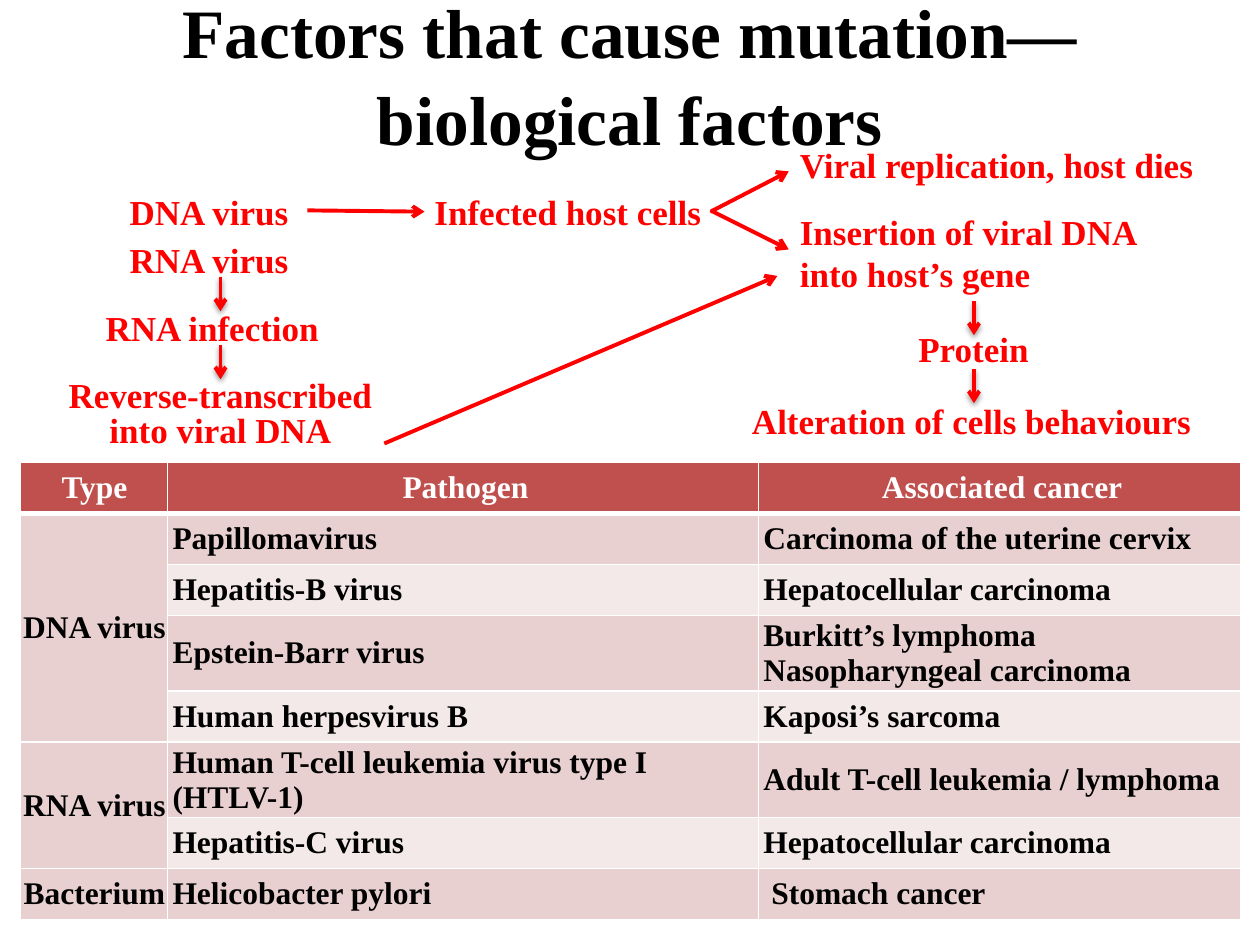
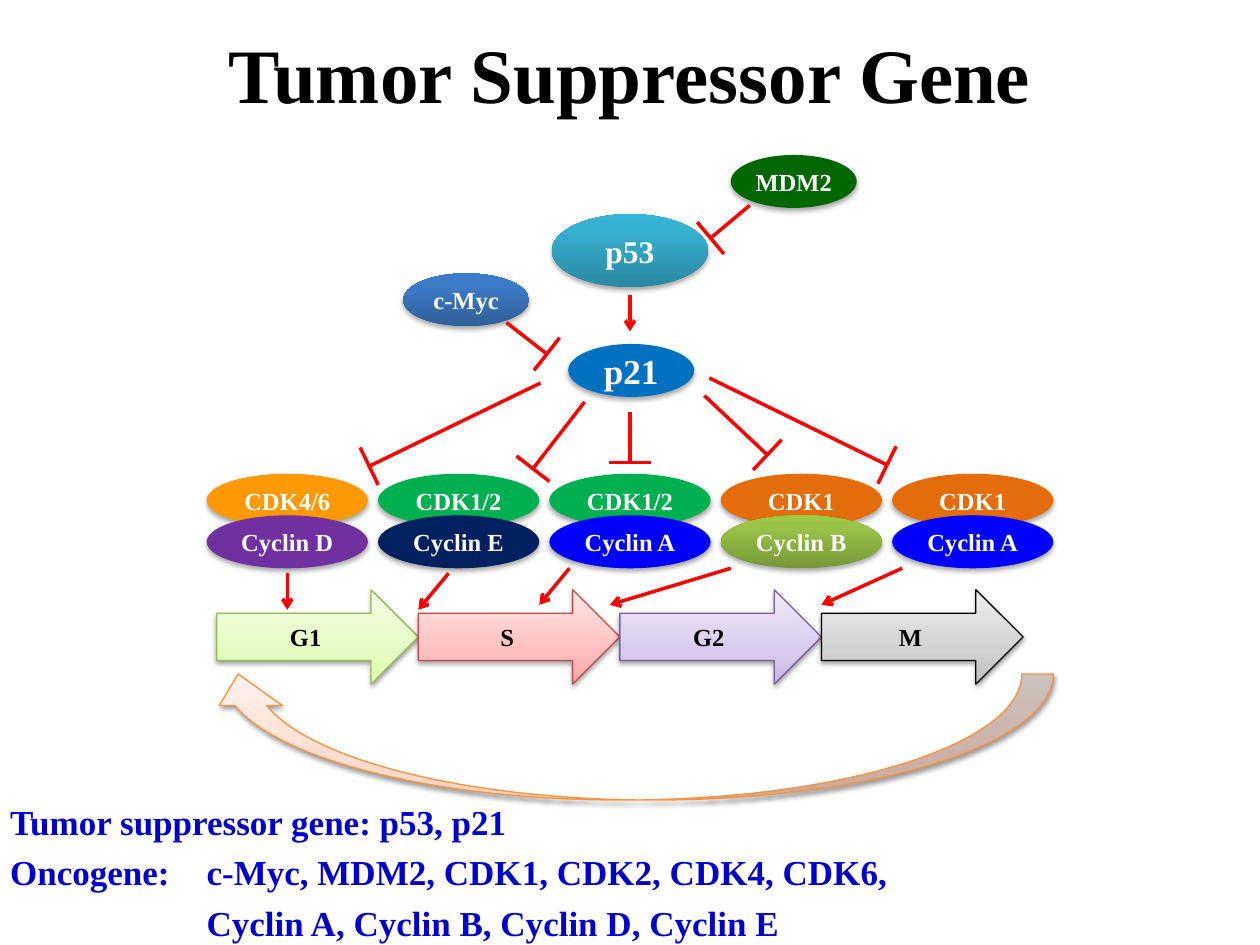
import math
from lxml import etree
from pptx import Presentation
from pptx import util as u
from pptx.dml.color import RGBColor
from pptx.enum import shapes, text
from pptx.oxml.ns import qn

COLORS = {
    "black": "000000", "white": "FFFFFF", "red": "FF0000", "note": "0000CC",
    "header": "C0504D", "band_dark": "E8D0D0", "band_light": "F4E9E9",
    "orange": "FF9900", "rust": "E46C0A", "purple": "7030A0", "green": "00B050",
    "navy": "002060", "blue": "0000FF", "sky": "0070C0", "forest": "006600",
    "g1_line": "98B955", "s_line": "BF4C48", "g2_line": "7D60A0", "cycle_line": "F69240",
}
GRADIENTS = {
    "lime": [(0, "779737"), (80, "9BC348"), (100, "9DC746")],
    "teal": [(0, "2A88A2"), (80, "37B1D2"), (100, "34B4D6")],
    "steel": [(0, "2F5F99"), (80, "3D7CC7"), (100, "3A7CCB")],
    "g1": [(0, "DAFDA7"), (35, "E4FCC2"), (100, "F5FFE7")],
    "s": [(0, "FFA6A5"), (35, "FFC0BF"), (100, "FFE7E7")],
    "g2": [(0, "C9B5E8"), (35, "D8CBEE"), (100, "F0EAF9")],
    "m": [(0, "BDBDBD"), (35, "D1D1D1"), (100, "EEEEEE")],
    "cycle": [(0, "FFD2BD"), (35, "FFDED0"), (100, "FFF2ED")],
}
SHAPE = shapes.MSO_SHAPE
LEFT, CENTER = text.PP_ALIGN.LEFT, text.PP_ALIGN.CENTER
MIDDLE = text.MSO_ANCHOR.MIDDLE

PATHOGENS = [
    ("Type", "Pathogen", "Associated cancer"),
    ("DNA virus", "Papillomavirus", "Carcinoma of the uterine cervix"),
    ("", "Hepatitis-B virus", "Hepatocellular carcinoma"),
    ("", "Epstein-Barr virus", "Burkitt’s lymphoma\nNasopharyngeal carcinoma"),
    ("", "Human herpesvirus B", "Kaposi’s sarcoma"),
    ("RNA virus", "Human T-cell leukemia virus type I (HTLV-1)",
     "Adult T-cell leukemia / lymphoma"),
    ("", "Hepatitis-C virus", "Hepatocellular carcinoma"),
    ("Bacterium", "Helicobacter pylori", " Stomach cancer"),
]


def rgb(name):
    return RGBColor.from_string(COLORS[name])


def inches(*lengths):
    return [u.Inches(length) for length in lengths]


def apply(target, values):
    for key, value in values.items():
        setattr(target, key, value)


def write(paragraph, words, size, color, **layout):
    paragraph.text = words
    apply(paragraph, layout)
    for run in paragraph.runs:
        apply(run.font, {"name": "Times New Roman", "size": u.Pt(size), "bold": True})
        run.font.color.rgb = rgb(color)


def write_lines(frame, words, size, color, **layout):
    for index, line in enumerate(words.split("\n")):
        paragraph = frame.add_paragraph() if index else frame.paragraphs[0]
        write(paragraph, line, size, color, **layout)


def place(item, left, top, width, height):
    apply(item, dict(zip(("left", "top", "width", "height"),
                         inches(left, top, width, height))))


def set_title(slide, words, size, spacing=1.0):
    title = slide.shapes.title
    place(title, 0, 0, 10, 1.15)
    apply(title.text_frame, {"auto_size": text.MSO_AUTO_SIZE.NONE, "vertical_anchor": MIDDLE})
    write(title.text_frame.paragraphs[0], words, size, "black",
          alignment=CENTER, line_spacing=spacing)


def add_shadow(properties, opacity, distance):
    effects = properties.find(qn("a:effectLst"))
    shadow = etree.SubElement(effects, qn("a:outerShdw"), blurRad=str(u.Pt(3.1)),
                              dist=str(u.Pt(distance)), dir="5400000", rotWithShape="0")
    tint = etree.SubElement(shadow, qn("a:srgbClr"), val=COLORS["black"])
    etree.SubElement(tint, qn("a:alpha"), val=str(opacity * 1000))


def add_line(slide, start, end, width=2, arrow=False, shadow=False):
    line = slide.shapes.add_connector(shapes.MSO_CONNECTOR.STRAIGHT, *inches(*start, *end))
    line.line.color.rgb = rgb("red")
    line.line.width = u.Pt(width)
    properties = line._element.spPr
    if arrow:
        etree.SubElement(properties.find(qn("a:ln")), qn("a:tailEnd"), type="arrow")
    etree.SubElement(properties, qn("a:effectLst"))
    if shadow:
        add_shadow(properties, 38, 1.6)


def add_inhibition(slide, start, end, half_bar=0.165):
    add_line(slide, start, end)
    angle = math.atan2(end[1] - start[1], end[0] - start[0])
    dx, dy = -math.sin(angle) * half_bar, math.cos(angle) * half_bar
    add_line(slide, (end[0] - dx, end[1] - dy), (end[0] + dx, end[1] + dy))


def add_label(slide, words, left, top, width, height=0.44, **layout):
    label = slide.shapes.add_textbox(*inches(left, top, width, height))
    label.text_frame.word_wrap = True
    write_lines(label.text_frame, words, 20, "red", **layout)


def paint(shape, fill):
    if fill in COLORS:
        shape.fill.solid()
        shape.fill.fore_color.rgb = rgb(fill)
        return
    shape.fill.gradient()
    shape.fill.gradient_angle = 90
    stops = shape._element.spPr.find(qn("a:gradFill")).find(qn("a:gsLst"))
    for stop in list(stops):
        stops.remove(stop)
    for position, color in GRADIENTS[fill]:
        stop = etree.SubElement(stops, qn("a:gs"), pos=str(position * 1000))
        etree.SubElement(stop, qn("a:srgbClr"), val=color)


def add_shape(slide, kind, box, fill, line=None):
    shape = slide.shapes.add_shape(kind, *inches(*box))
    paint(shape, fill)
    if line:
        shape.line.color.rgb = rgb(line)
        shape.line.width = u.Pt(0.75)
    else:
        shape.line.fill.background()
    shape.shadow.inherit = False
    add_shadow(shape._element.spPr, *((38, 1.6) if line else (35, 1.8)))
    return shape


def add_protein(slide, words, box, fill, size=14):
    frame = add_shape(slide, SHAPE.OVAL, box, fill).text_frame
    apply(frame, {"vertical_anchor": MIDDLE, "margin_left": 0, "margin_right": 0,
                  "margin_top": 0, "margin_bottom": 0})
    write(frame.paragraphs[0], words, size, "white", alignment=CENTER)


def add_phase(slide, words, box, fill, line):
    frame = add_shape(slide, SHAPE.RIGHT_ARROW, box, fill, line).text_frame
    frame.vertical_anchor = MIDDLE
    write(frame.paragraphs[0], words, 14, "black", alignment=CENTER)


def set_borders(cell, **widths):
    properties = cell._tc.get_or_add_tcPr()
    for index, side in enumerate("LRTB"):
        border = etree.Element(qn("a:ln" + side), w=str(u.Pt(widths.get(side, 1))))
        fill = etree.SubElement(border, qn("a:solidFill"))
        etree.SubElement(fill, qn("a:srgbClr"), val=COLORS["white"])
        properties.insert(index, border)


def add_pathogen_table(slide):
    table = slide.shapes.add_table(len(PATHOGENS), 3, *inches(0.16, 3.67, 9.69, 3.63)).table
    for column, width in zip(table.columns, inches(1.17, 4.69, 3.83)):
        column.width = width
    tall_rows = (3, 5)
    for r, row in enumerate(PATHOGENS):
        table.rows[r].height = u.Inches(0.6 if r in tall_rows else (3.63 - 2 * 0.6) / 6)
        band = "header" if r == 0 else "band_dark" if r % 2 else "band_light"
        for c, words in enumerate(row):
            cell = table.cell(r, c)
            apply(cell, {"margin_left": u.Inches(0.04 if c else 0.01), "margin_right": 0,
                         "margin_top": 0, "margin_bottom": 0, "vertical_anchor": MIDDLE})
            cell.fill.solid()
            cell.fill.fore_color.rgb = rgb(band)
            set_borders(cell, T=3 if r == 1 else 1, B=1 if r else 3)
            write_lines(cell.text_frame, words, 18, "black" if r else "white",
                        alignment=LEFT if r and c else CENTER)
    for first, last in ((1, 4), (5, 6)):
        table.cell(first, 0).merge(table.cell(last, 0))


def add_gene_summary(slide):
    summary = slide.placeholders[1]
    place(summary, 0, 6.3, 10, 1.2)
    frame = summary.text_frame
    apply(frame, {"auto_size": text.MSO_AUTO_SIZE.NONE, "vertical_anchor": text.MSO_ANCHOR.TOP,
                  "margin_left": u.Inches(0.08), "margin_right": 0})
    lines = [
        ("Tumor suppressor gene: p53, p21", 0.56, -0.56),
        ("Oncogene:\tc-Myc, MDM2, CDK1, CDK2, CDK4, CDK6,", 1.56, -1.56),
        ("Cyclin A, Cyclin B, Cyclin D, Cyclin E", 1.56, 0),
    ]
    for index, (words, margin, indent) in enumerate(lines):
        paragraph = frame.add_paragraph() if index else frame.paragraphs[0]
        properties = paragraph._p.get_or_add_pPr()
        properties.set("marL", str(u.Inches(margin)))
        properties.set("indent", str(u.Inches(indent)))
        etree.SubElement(properties, qn("a:buNone"))
        write(paragraph, words, 20, "note", space_before=u.Pt(5 if index else 0))


def build_factors(deck):
    slide = deck.slides.add_slide(deck.slide_layouts[5])
    set_title(slide, "Factors that cause mutation—\vbiological factors", 39.6, 1.05)
    for label in [
        ("DNA virus", 0.93, 1.46, 1.64),
        ("RNA virus", 0.93, 1.84, 1.64),
        ("RNA infection", 0.74, 2.38, 2.03),
        ("Infected host cells", 3.35, 1.46, 2.47),
        ("Viral replication, host dies", 6.25, 1.09, 3.5),
        ("Insertion of viral DNA\ninto host’s gene", 6.25, 1.62, 3.1, 0.77),
        ("Protein", 7.19, 2.55, 1.2),
        ("Alteration of cells behaviours", 5.87, 3.12, 3.9),
    ]:
        add_label(slide, *label)
    add_label(slide, "Reverse-transcribed\ninto viral DNA", 0.4, 2.97, 2.7, 0.66,
              alignment=CENTER, line_spacing=u.Pt(20))
    for start, end in [((2.44, 1.67), (3.37, 1.68)), ((5.64, 1.68), (6.26, 1.36)),
                       ((5.64, 1.67), (6.26, 1.98)), ((3.05, 3.52), (6.17, 2.19))]:
        add_line(slide, start, end, 2.25, arrow=True)
    for x, top in [(1.75, 2.2), (1.75, 2.74), (7.73, 2.39), (7.73, 2.93)]:
        add_line(slide, (x, top), (x, top + 0.27), 2.25, arrow=True, shadow=True)
    add_pathogen_table(slide)


def build_suppressor(deck):
    slide = deck.slides.add_slide(deck.slide_layouts[1])
    set_title(slide, "Tumor Suppressor Gene", 44)
    complexes = [
        ("CDK4/6", "orange", "Cyclin D", "purple"),
        ("CDK1/2", "green", "Cyclin E", "navy"),
        ("CDK1/2", "green", "Cyclin A", "blue"),
        ("CDK1", "rust", "Cyclin B", "lime"),
        ("CDK1", "rust", "Cyclin A", "blue"),
    ]
    for index, (kinase, kinase_fill, cyclin, cyclin_fill) in enumerate(complexes):
        left = 1.64 + 1.36 * index
        add_protein(slide, kinase, (left, 3.76, 1.28, 0.42), kinase_fill)
        add_protein(slide, cyclin, (left, 4.09, 1.28, 0.42), cyclin_fill)
    phases = [("G1", "g1", "g1_line"), ("S", "s", "s_line"),
              ("G2", "g2", "g2_line"), ("M", "m", "black")]
    for index, (phase, fill, line) in enumerate(phases):
        add_phase(slide, phase, (1.72 + 1.6 * index, 4.68, 1.6, 0.75), fill, line)
    cycle = add_shape(slide, SHAPE.CURVED_UP_ARROW, (1.64, 5.35, 6.72, 1), "cycle", "cycle_line")
    cycle._element.spPr.find(qn("a:xfrm")).set("flipH", "1")
    add_protein(slide, "p53", (4.38, 1.7, 1.24, 0.58), "teal", 18)
    add_protein(slide, "c-Myc", (3.2, 2.17, 1, 0.42), "steel")
    add_protein(slide, "MDM2", (5.8, 1.23, 1, 0.42), "forest")
    add_protein(slide, "p21", (4.51, 2.73, 1, 0.42), "sky", 20)
    for start, end in [((2.28, 4.55), (2.28, 4.84)), ((3.56, 4.55), (3.32, 4.84)),
                       ((4.52, 4.51), (4.28, 4.8)), ((5.8, 4.51), (4.84, 4.8)),
                       ((7.16, 4.51), (6.52, 4.8)), ((5, 2.34), (5, 2.63))]:
        add_line(slide, start, end, arrow=True)
    for start, end in [((4.02, 2.56), (4.34, 2.81)), ((5.95, 1.63), (5.64, 1.89)),
                       ((4.29, 3.04), (2.93, 3.7)), ((4.64, 3.19), (4.23, 3.72)),
                       ((5, 3.27), (5, 3.67)), ((5.59, 3.14), (6.09, 3.61)),
                       ((5.63, 3), (7.04, 3.69))]:
        add_inhibition(slide, start, end)
    add_gene_summary(slide)


def main():
    deck = Presentation()
    deck.slide_width, deck.slide_height = inches(10, 7.5)
    build_factors(deck)
    build_suppressor(deck)
    deck.save("out.pptx")


if __name__ == "__main__":
    main()
